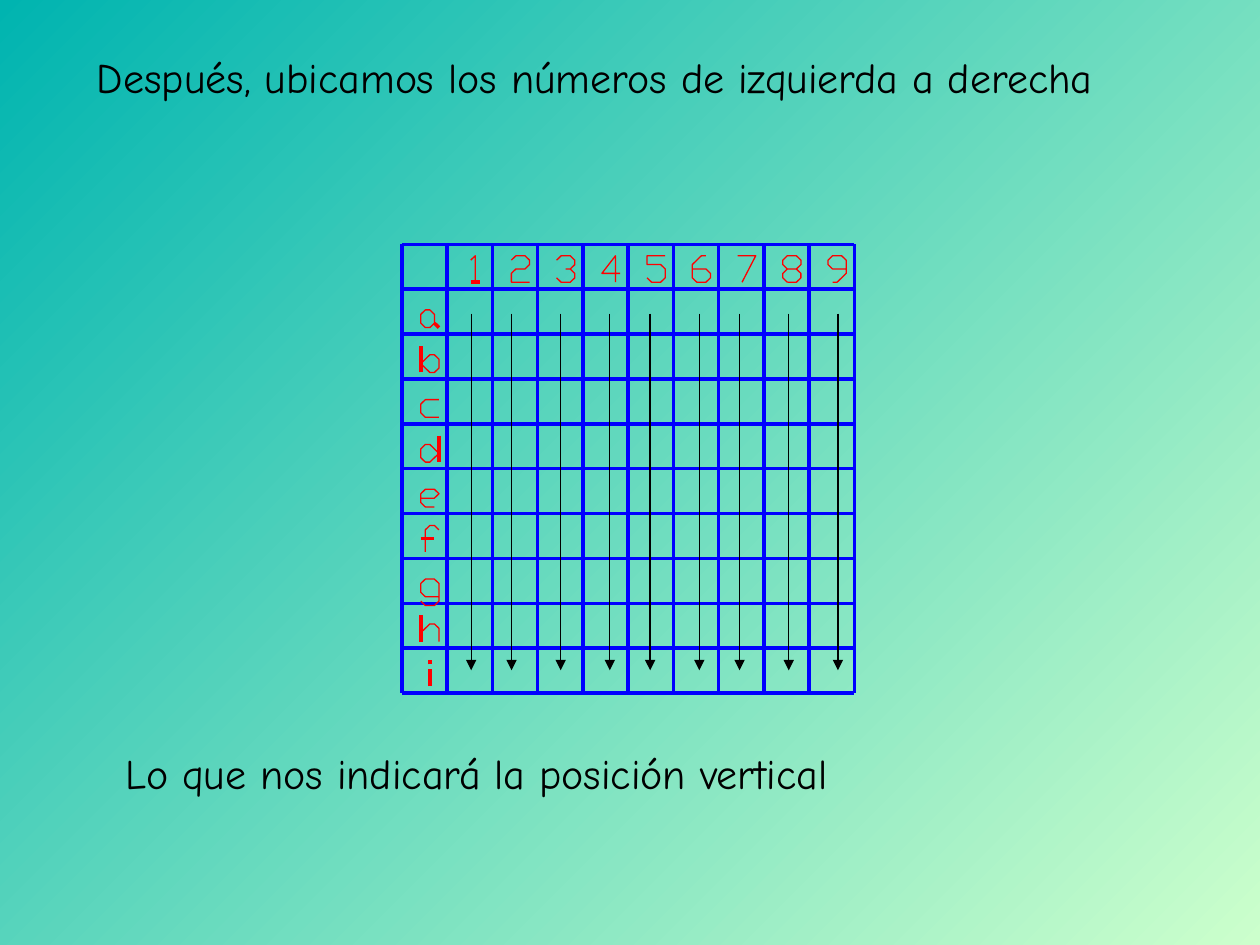
from pptx import Presentation
from pptx.dml.color import RGBColor as RGB
from pptx.enum.shapes import MSO_CONNECTOR as CONN
from pptx.oxml.ns import qn
from pptx.util import Inches, Pt
from lxml import etree

THEME = {
    "font": "Comic Neue",
    "size": Pt(24),
    "text": RGB.from_string("000000"),
    "grid": RGB.from_string("0000FF"),
    "label": RGB.from_string("FF0000"),
    "arrow": RGB.from_string("000000"),
    "hairline": Pt(0),
    "arrow_width": Pt(0.75),
    "background": [(0, RGB.from_string("00B4B0")), (1, RGB.from_string("CCFFCC"))],
    "background_angle": 315,
}

CAPTIONS = [
    ("Después, ubicamos los números de izquierda a derecha", 0.67, 0.36),
    ("Lo que nos indicará la posición vertical", 0.9, 5.88),
]
COLUMN_LABELS = "123456789"
ROW_LABELS = "abcdefghi"
ARROW_XS = [3.74, 4.06, 4.45, 4.84, 5.16, 5.55, 5.87, 6.26, 6.65]
ARROW_TOP, ARROW_BOTTOM = 2.49, 5.32

GLYPHS = {
    "a": ["26 16 05 03 12 22 33 35 26", "35 46"],
    "b": ["06 00", "04 22 32 43 45 36 26 04"],
    "c": ["42 12 03 05 16 46"],
    "d": ["44 26 16 05 03 12 22 44", "40 46"],
    "e": ["04 34 43 32 12 03 05 16 36"],
    "f": ["03 33", "41 30 20 11 16"],
    "g": ["07 18 38 47 43 32 12 03 05 16 46"],
    "h": ["06 00", "04 22 32 43 46"],
    "i": ["26 22", "21 20"],
    "1": ["11 20 26", "16 36"],
    "2": ["01 10 30 41 42 33 13 04 06 46"],
    "3": ["01 10 30 41 42 33 23", "33 44 45 36 16 05"],
    "4": ["44 04 30 36"],
    "5": ["05 16 36 45 43 32 02 00 40"],
    "6": ["03 33 44 45 36 16 05 02 20 30"],
    "7": ["00 40 16"],
    "8": ["16 05 04 13 33 42 41 30 10 01 02 13", "33 44 45 36 16"],
    "9": ["16 26 44 41 30 10 01 02 13 43"],
}

LEFT, TOP = 3.19, 1.94
COL_W, ROW_H = 0.359, 0.356
CELLS = 10
RIGHT, BOTTOM = LEFT + CELLS * COL_W, TOP + CELLS * ROW_H
UNIT_X, UNIT_Y = 0.036, 0.035
DIGITS_X, DIGITS_Y = 3.7, 2.03
LETTERS_X, LETTERS_Y = 3.34, 2.39


def add_text(s, text, x, y, w=8.74, h=0.5, font=THEME["font"],
             size=THEME["size"], color=THEME["text"]):
    tf = s.shapes.add_textbox(Inches(x), Inches(y), Inches(w), Inches(h)).text_frame
    tf.word_wrap = True
    r = tf.paragraphs[0].add_run()
    r.text = text
    r.font.name, r.font.size = font, size
    r.font.color.rgb = color


def add_line(s, start, end, color, width=THEME["hairline"], arrow=False):
    sp = s.shapes.add_connector(CONN.STRAIGHT, *map(Inches, (*start, *end)))
    sp.line.color.rgb = color
    sp.line.width = width
    if arrow:
        etree.SubElement(sp.line._get_or_add_ln(), qn("a:tailEnd"), type="triangle")
    etree.SubElement(sp._element.spPr, qn("a:effectLst"))


def add_stroke(s, points, color):
    if len(points) == 2:
        add_line(s, *points, color)
        return
    first, *rest = [(Inches(x), Inches(y)) for x, y in points]
    builder = s.shapes.build_freeform(*first)
    builder.add_line_segments(rest, close=False)
    sp = builder.convert_to_shape()
    sp.fill.background()
    sp.line.color.rgb = color
    sp.line.width = THEME["hairline"]
    sp.shadow.inherit = False


def add_glyph(s, char, x, y):
    for stroke in GLYPHS[char]:
        points = [(x + int(a) * UNIT_X, y + int(b) * UNIT_Y) for a, b in stroke.split()]
        add_stroke(s, points, THEME["label"])


def set_background(s):
    fill = s.background.fill
    fill.gradient()
    fill.gradient_angle = THEME["background_angle"]
    for stop, (position, color) in zip(fill.gradient_stops, THEME["background"]):
        stop.position = position
        stop.color.rgb = color


def main():
    prs = Presentation()
    prs.slide_width, prs.slide_height = Inches(10), Inches(7.5)
    s = prs.slides.add_slide(prs.slide_layouts[6])
    set_background(s)

    for i in range(CELLS + 1):
        x, y = LEFT + i * COL_W, TOP + i * ROW_H
        add_line(s, (x, TOP), (x, BOTTOM), THEME["grid"])
        add_line(s, (LEFT, y), (RIGHT, y), THEME["grid"])

    for i, (digit, letter) in enumerate(zip(COLUMN_LABELS, ROW_LABELS)):
        add_glyph(s, digit, DIGITS_X + i * COL_W, DIGITS_Y)
        add_glyph(s, letter, LETTERS_X, LETTERS_Y + i * ROW_H)

    for x in ARROW_XS:
        add_line(s, (x, ARROW_TOP), (x, ARROW_BOTTOM), THEME["arrow"],
                 THEME["arrow_width"], arrow=True)

    for text, x, y in CAPTIONS:
        add_text(s, text, x, y)

    prs.save("out.pptx")


if __name__ == "__main__":
    main()
